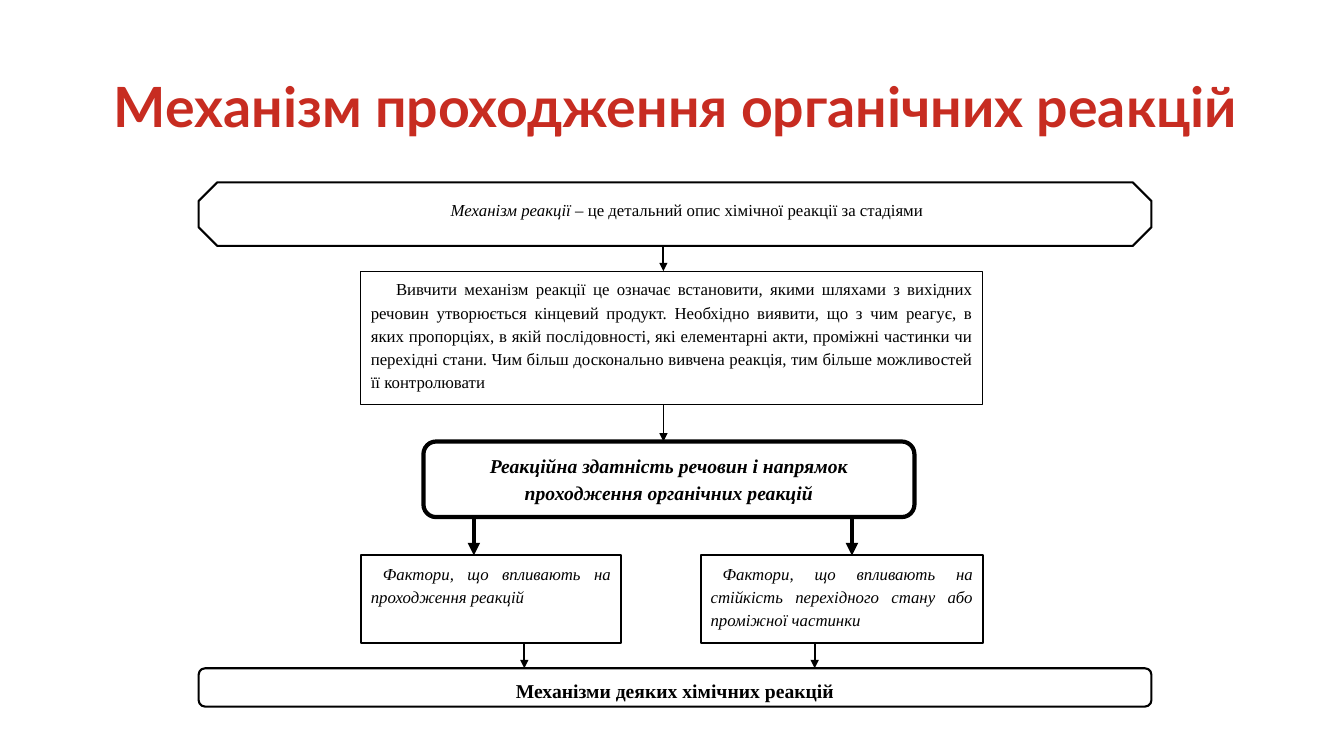
from lxml.etree import SubElement
from pptx import Presentation
from pptx.dml.color import RGBColor
from pptx.enum.shapes import MSO_CONNECTOR, MSO_SHAPE
from pptx.enum.text import MSO_ANCHOR, PP_ALIGN
from pptx.oxml.ns import qn
from pptx.util import Inches, Pt

BLACK, WHITE, RED = "000000", "FFFFFF", "C72C21"


def color(value):
    return RGBColor.from_string(value)


def write(frame, runs, size, font="Times New Roman", ink=BLACK, bold=False,
          align=PP_ALIGN.CENTER, anchor=MSO_ANCHOR.TOP, margin=0, indent=0):
    frame.word_wrap = True
    frame.vertical_anchor = anchor
    paragraph = frame.paragraphs[0]
    properties = paragraph._p.get_or_add_pPr()
    properties.set("marL", str(Inches(margin)))
    properties.set("indent", str(Inches(indent)))
    paragraph.alignment = align
    paragraph.line_spacing = 1.15
    paragraph.space_after = Pt(10)
    paragraph.font.name = font
    paragraph.font.size = Pt(size)
    paragraph.font.bold = bold
    paragraph.font.color.rgb = color(ink)
    for text, italic in runs:
        run = paragraph.add_run()
        run.text = text
        run.font.italic = italic


def add_block(slide, kind, box, weight, runs, size=12, corner=None, **style):
    shape = slide.shapes.add_shape(kind, *map(Inches, box))
    shape.shadow.inherit = False
    shape.fill.solid()
    shape.fill.fore_color.rgb = color(WHITE)
    shape.line.color.rgb = color(BLACK)
    shape.line.width = Pt(weight)
    if corner is not None:
        shape.adjustments[0] = corner
    write(shape.text_frame, runs, size, **style)


def add_arrow(slide, x, top, bottom, weight):
    arrow = slide.shapes.add_connector(
        MSO_CONNECTOR.STRAIGHT, Inches(x), Inches(top), Inches(x), Inches(bottom))
    arrow.line.color.rgb = color(BLACK)
    arrow.line.width = Pt(weight)
    SubElement(arrow.line._get_or_add_ln(), qn("a:tailEnd"), type="triangle")
    SubElement(arrow._element.spPr, qn("a:effectLst"))


def add_title(slide, box):
    title = slide.shapes.add_textbox(*map(Inches, box))
    write(title.text_frame, [("Механізм проходження органічних реакцій", False)],
          39.6, font="Lato", ink=RED, bold=True, anchor=MSO_ANCHOR.MIDDLE)


def add_definition(slide, box):
    left, top, width, height = box
    add_block(slide, MSO_SHAPE.OCTAGON, (left, top, width, 0.63), 1.5,
              [("Механізм реакції", True),
               (" – це детальний опис хімічної реакції за стадіями", False)],
              corner=0.293, margin=0.12, indent=0.12)
    explanation_top = top + 0.88
    add_block(slide, MSO_SHAPE.RECTANGLE,
              (left + 1.61, explanation_top, 6.17, height - 0.88), 0.75,
              [("Вивчити механізм реакції це означає встановити, якими шляхами з "
                "вихідних речовин утворюється кінцевий продукт. Необхідно виявити, "
                "що з чим реагує, в яких пропорціях, в якій послідовності, які "
                "елементарні акти, проміжні частинки чи перехідні стани. Чим більш "
                "досконально вивчена реакція, тим більше можливостей її "
                "контролювати", False)],
              align=PP_ALIGN.JUSTIFY, indent=0.25)
    add_arrow(slide, left + 4.61, top + 0.63, explanation_top, 1.5)


def add_factors(slide, box):
    left, top, width, height = box
    factors_top = top + 1.13
    add_block(slide, MSO_SHAPE.ROUNDED_RECTANGLE, (left + 0.62, top, 4.87, 0.75), 3,
              [("Реакційна здатність речовин і напрямок проходження органічних "
                "реакцій", True)], size=14, bold=True, corner=0.167)
    factors = [
        (0, 2.58, 1.12, "Фактори, що впливають на проходження реакцій"),
        (width - 2.8, 2.8, width - 1.3,
         "Фактори, що впливають на стійкість перехідного стану або проміжної "
         "частинки"),
    ]
    for offset, block_width, arrow_offset, text in factors:
        add_block(slide, MSO_SHAPE.RECTANGLE,
                  (left + offset, factors_top, block_width, height - 1.13), 1.5,
                  [(text, True)], align=PP_ALIGN.JUSTIFY, indent=0.12)
        add_arrow(slide, left + arrow_offset, top + 0.75, factors_top, 3)


def add_outcome(slide, box):
    left, top, width, height = box
    add_block(slide, MSO_SHAPE.ROUNDED_RECTANGLE, box, 1.5,
              [("Механізми деяких хімічних реакцій", False)],
              size=14, bold=True, corner=0.167)
    for offset in (3.23, 6.11):
        add_arrow(slide, left + offset, top - 0.25, top, 1.5)


def main():
    presentation = Presentation()
    presentation.slide_width = Inches(13.33)
    presentation.slide_height = Inches(7.5)
    slide = presentation.slides.add_slide(presentation.slide_layouts[6])
    add_definition(slide, (1.97, 1.81, 9.45, 2.2))
    add_arrow(slide, 6.58, 4.01, 4.38, 0.75)
    add_factors(slide, (3.58, 4.38, 6.17, 2))
    add_outcome(slide, (1.97, 6.63, 9.45, 0.38))
    add_title(slide, (0.95, 0.27, 11.5, 1.45))
    presentation.save("out.pptx")


if __name__ == "__main__":
    main()
